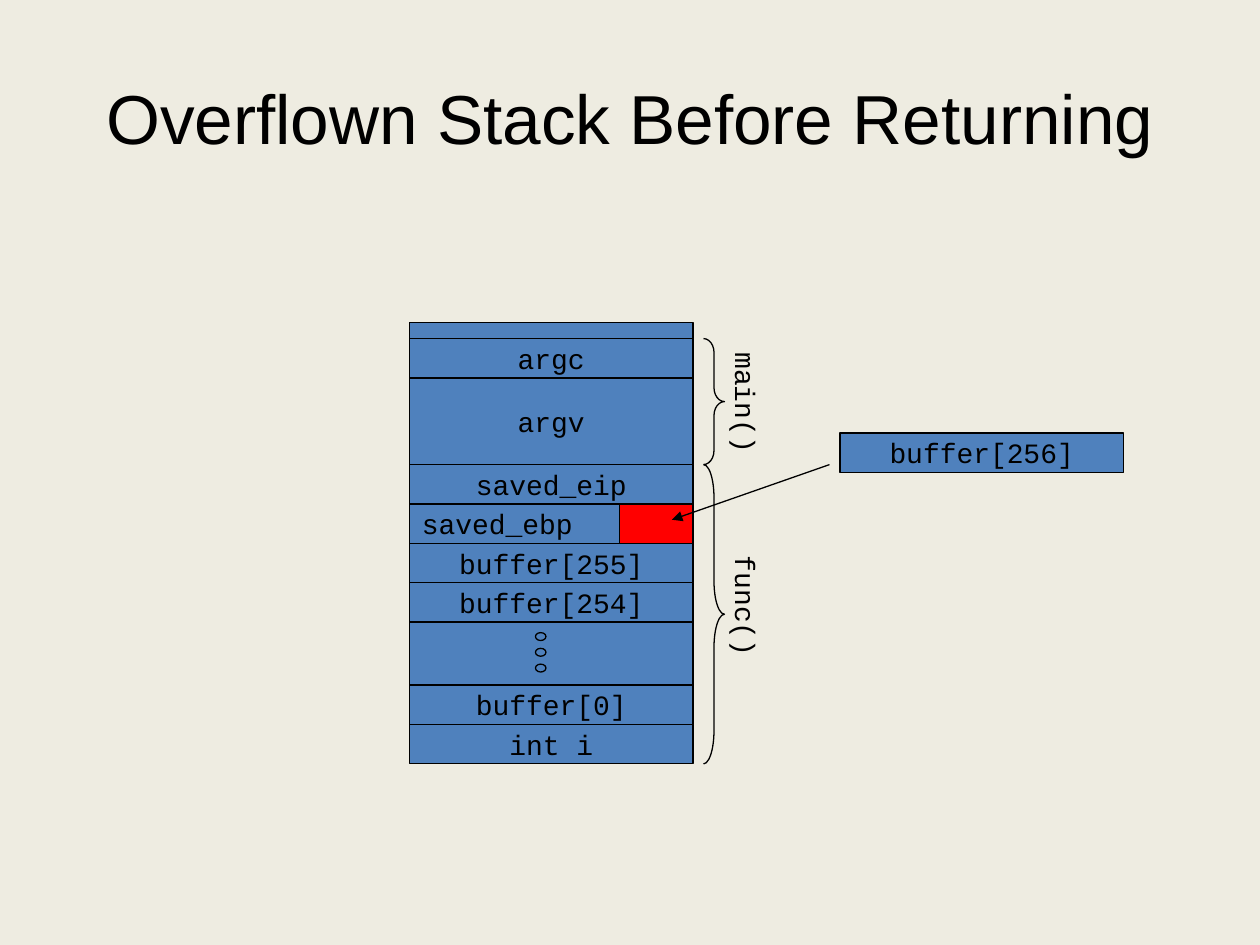
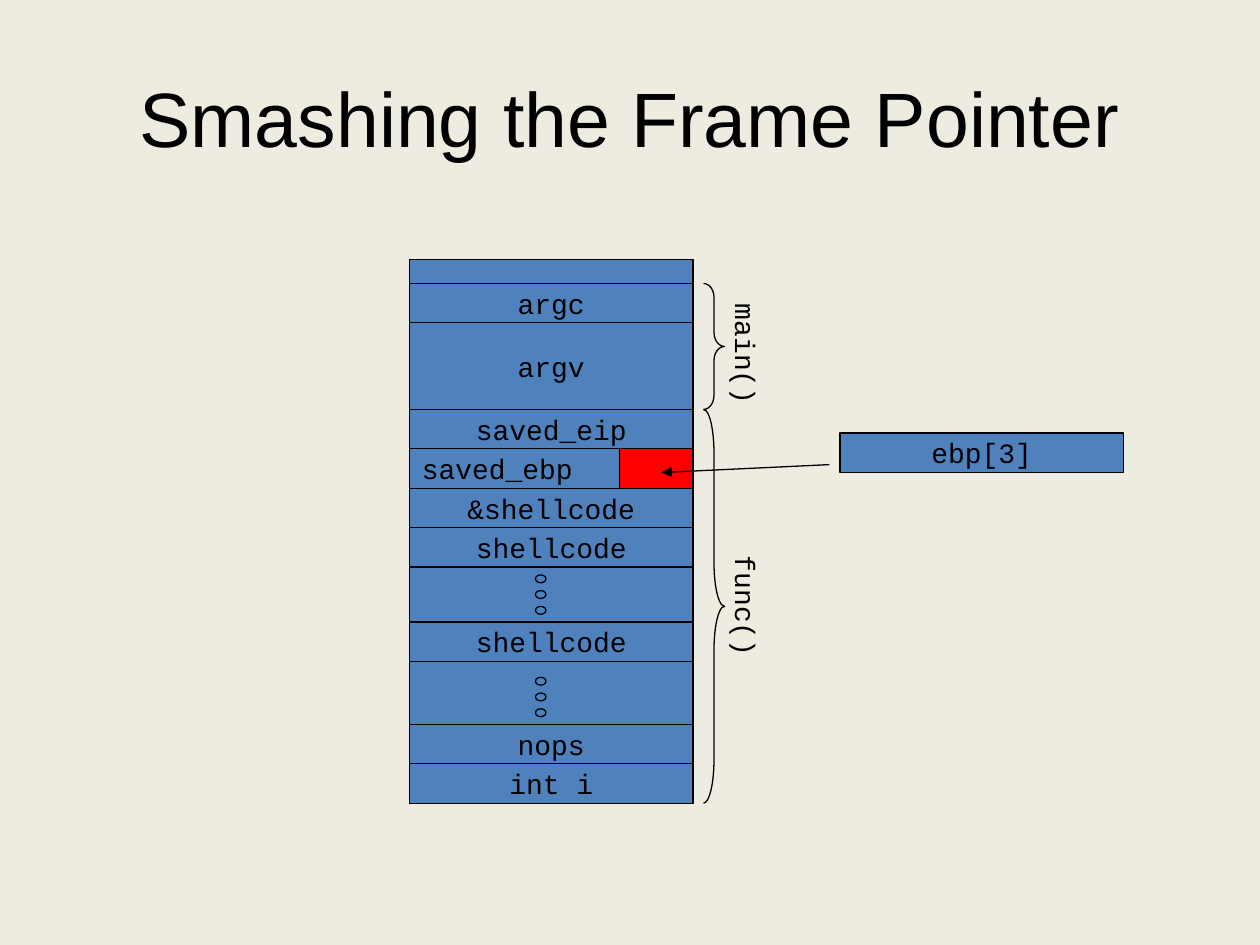
from pptx import Presentation
from pptx import util as u
from pptx.dml.color import RGBColor
from pptx.enum import shapes, text
from pptx.oxml.ns import qn
from lxml import etree

SCALE = 9525  # EMU per px, 96 px to the inch
COLORS = {"back": "EEECE1", "cell": "4F81BD", "mark": "FF0000", "ink": "000000"}
LEFT, WIDE, ROW = 312, 216, 30
KIND = shapes.MSO_SHAPE
ALIGN = text.PP_ALIGN


def px(*nums):
    return [u.Emu(n * SCALE) for n in nums]


def tint(name):
    return RGBColor.from_string(COLORS[name])


class Deck:
    """Holds the shared style and the slide being drawn."""

    def __init__(self):
        self.prs = Presentation()
        self.prs.slide_width, self.prs.slide_height = px(960, 720)
        fill = self.prs.slide_master.background.fill
        fill.solid()
        fill.fore_color.rgb = tint("back")

    def font(self, para, size, face="Courier New"):
        para.font.size = u.Pt(size)
        para.font.name = face
        para.font.color.rgb = tint("ink")

    def edge(self, item):
        item.line.color.rgb = tint("ink")
        item.line.width = u.Pt(0.75)

    def start(self, title, size):
        self.slide = self.prs.slides.add_slide(self.prs.slide_layouts[5])
        head = self.slide.shapes.title
        head.left, head.top, head.width, head.height = px(48, 29, 864, 120)
        frame = head.text_frame
        frame.text = title
        frame.auto_size = text.MSO_AUTO_SIZE.NONE
        frame.vertical_anchor = text.MSO_ANCHOR.MIDDLE
        frame.paragraphs[0].alignment = ALIGN.CENTER
        self.font(frame.paragraphs[0], size, "Arial")

    def shape(self, kind, box, fill=None, home=None):
        item = (home or self.slide).shapes.add_shape(kind, *px(*box))
        item.shadow.inherit = False
        self.edge(item)
        if fill:
            item.fill.solid()
            item.fill.fore_color.rgb = tint(fill)
        else:
            item.fill.background()
        return item

    def cell(self, box, label="", fill="cell", align=ALIGN.CENTER):
        item = self.shape(KIND.RECTANGLE, box, fill)
        if label:
            frame = item.text_frame
            frame.text = label
            frame.word_wrap = False
            frame.vertical_anchor = text.MSO_ANCHOR.MIDDLE
            frame.paragraphs[0].alignment = align
            self.font(frame.paragraphs[0], 16)

    def dots(self, left, top):
        group = self.slide.shapes.add_group_shape()
        for i in range(3):
            self.shape(KIND.OVAL, (left, top + 12 * i, 8, 6), "cell", group)

    def brace(self, top, end):
        high, wide = end - top, 16
        item = self.shape(KIND.RIGHT_BRACE, (536, top, wide, high))
        item.adjustments[0] = high / wide / 9

    def label(self, words, top):
        item = self.slide.shapes.add_textbox(*px(514, top, 108, 36))
        item.rotation = 90
        frame = item.text_frame
        frame.word_wrap = True
        frame.text = words
        self.font(frame.paragraphs[0], 16)

    def arrow(self, *ends):
        item = self.slide.shapes.add_connector(
            shapes.MSO_CONNECTOR.STRAIGHT, *px(*ends))
        self.edge(item)
        props = item.element.spPr
        etree.SubElement(props.find(qn("a:ln")), qn("a:tailEnd"), type="triangle")
        etree.SubElement(props, qn("a:effectLst"))

    def stack(self, top, rows):
        """Draw rows downwards; return the top of each named row and the end."""
        tops = {}
        for name, high, drop in rows:
            align = ALIGN.LEFT if name == "saved_ebp" else ALIGN.CENTER
            self.cell((LEFT, top, WIDE, high), name, align=align)
            if drop:
                self.dots(408, top + drop)
            tops[name] = top
            top += high
        return tops, top


def row(name="", high=ROW, drop=0):
    return name, high, drop


FRAME = [row("argc"), row("argv", 66), row("saved_eip"), row("saved_ebp")]

# Title, title size, stack top, rows, main() label top, callout, arrow tip
SLIDES = [
    ("Overflown Stack Before Returning", 39.6, 246,
     [row(high=12), *FRAME, row("buffer[255]"), row("buffer[254]"),
      row(high=48, drop=8), row("buffer[0]"), row("int i")],
     295, "buffer[256]", (512, 396)),
    ("Smashing the Frame Pointer", 44, 198,
     [row(high=18), *FRAME, row("&shellcode"), row("shellcode"),
      row(high=42, drop=6), row("shellcode"), row(high=48, drop=12),
      row("nops"), row("int i")],
     258, "ebp[3]", (504, 360)),
]


def main():
    deck = Deck()
    for title, size, top, rows, main_top, note, tip in SLIDES:
        deck.start(title, size)
        # Memory stack
        tops, end = deck.stack(top, rows)
        # Function frames
        deck.brace(tops["argc"], tops["saved_eip"])
        deck.brace(tops["saved_eip"], end)
        deck.label("main()", main_top)
        deck.label("func()", 450)
        # Overwritten byte and its callout
        deck.cell((472, tops["saved_ebp"], 56, ROW), fill="mark")
        deck.arrow(632, 354, *tip)
        deck.cell((640, 330, WIDE, ROW), note)
    deck.prs.save("out.pptx")


if __name__ == "__main__":
    main()
